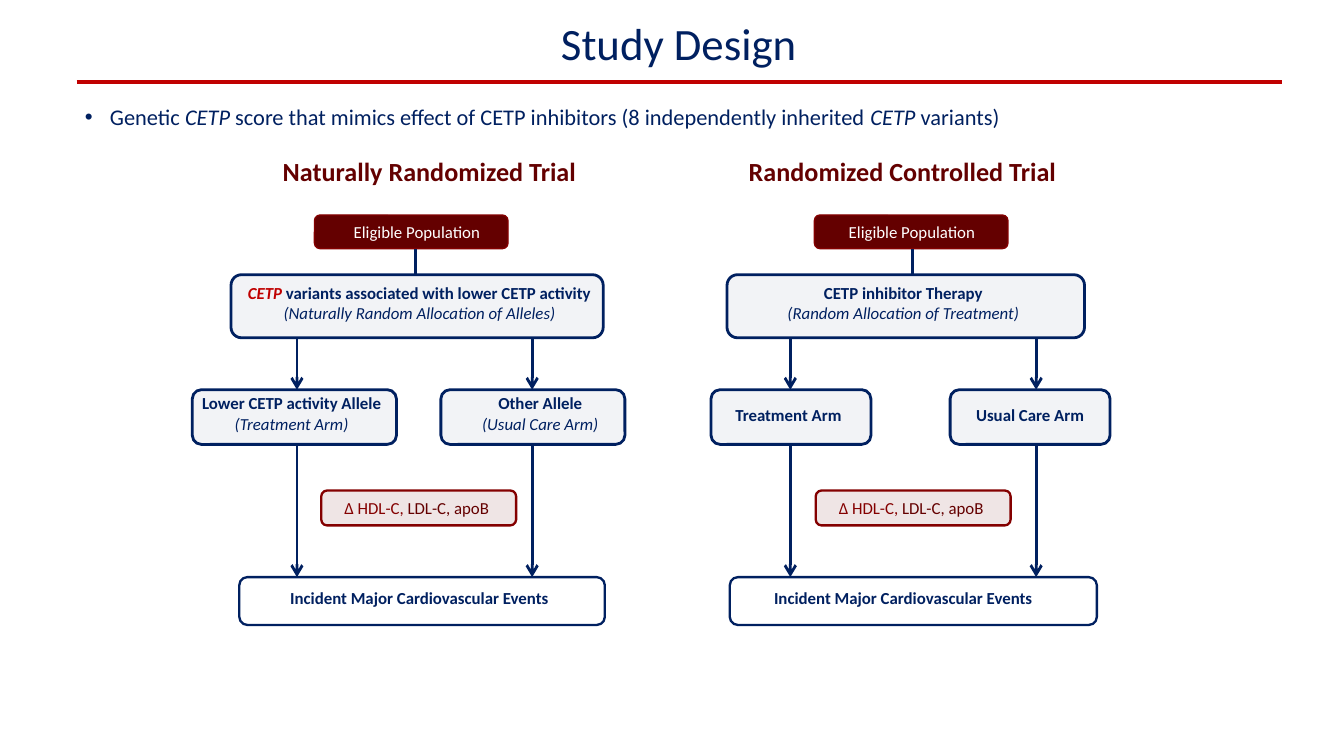
from lxml import etree
from pptx import Presentation
from pptx.dml.color import RGBColor
from pptx.enum import shapes, text
from pptx.oxml.ns import qn
from pptx.util import Pt

THEME = {
    "font": "Calibri",
    "navy": "002060", "red": "C00000", "maroon": "640000", "crimson": "840000", "white": "FFFFFF",
    "title": 24, "heading": 14, "body": 12, "label": 9,
}

# A run is (text, colour, styles), where styles may hold b for bold and i for italic.
TITLE = [("Study Design", "navy", "")]
SUMMARY = [
    ("Genetic ", "navy", ""), ("CETP", "navy", "i"),
    (" score that mimics effect of CETP inhibitors (8 independently inherited ", "navy", ""),
    ("CETP", "navy", "i"), (" variants)", "navy", ""),
]
ELIGIBLE = [[("Eligible Population", "white", "")]]
LIPIDS = [[("Δ HDL-C, ", "crimson", ""), ("LDL-C, apoB", "maroon", "")]]
EVENTS = [[("Incident Major Cardiovascular Events", "navy", "b")]]

# Each row: top, height, fill, fill opacity in percent, line colour, line width, tight line spacing
ROWS = {
    "eligible": (115.2, 18, "maroon", 100, "crimson", 0.75, False),
    "allocation": (147.2, 33.8, "navy", 5, "navy", 1.5, True),
    "arms": (208.8, 29.3, "navy", 5, "navy", 1.5, True),
    "lipids": (262.8, 18.7, "maroon", 10, "crimson", 1.25, False),
    "events": (309.2, 25.6, None, 0, "navy", 1.25, True),
}

# Each node: row, left, width, shift of the label from the box centre, paragraphs
TRIALS = [
    {
        "heading": ("Naturally Randomized Trial", 139.7, 180.7),
        "stem": 222.5, "arrows": (159.1, 285.1),
        "nodes": [
            ("eligible", 168.5, 103.7, 2.9, ELIGIBLE),
            ("allocation", 123.8, 199.4, 1.1, [
                [("CETP ", "red", "bi"), ("variants associated with lower CETP activity", "navy", "b")],
                [("(Naturally Random Allocation of Alleles)", "navy", "i")]]),
            ("arms", 103, 109.4, -1.5, [
                [("Lower CETP activity Allele", "navy", "b")], [("(Treatment Arm)", "navy", "i")]]),
            ("arms", 236.2, 98.6, 3.9, [
                [("Other Allele", "navy", "b")], [("(Usual Care Arm)", "navy", "i")]]),
            ("lipids", 172.1, 104.4, -1.1, LIPIDS),
            ("events", 128.2, 195.8, -1.5, EVENTS),
        ],
    },
    {
        "heading": ("Randomized Controlled Trial", 388.8, 189.4),
        "stem": 488.9, "arrows": (423.4, 555.1),
        "nodes": [
            ("eligible", 436.3, 103.7, 0.3, ELIGIBLE),
            ("allocation", 389.5, 191.5, -1.4, [
                [("CETP inhibitor Therapy", "navy", "b")],
                [("(Random Allocation of Treatment)", "navy", "i")]]),
            ("arms", 380.9, 85.7, -1.4, [[("Treatment Arm", "navy", "b")]]),
            ("arms", 509, 85.7, 0, [[("Usual Care Arm", "navy", "b")]]),
            ("lipids", 437, 104.4, -1.1, LIPIDS),
            ("events", 391, 196.6, -5.5, EVENTS),
        ],
    },
]


def color(name):
    return RGBColor.from_string(THEME[name])


def assign(target, values):
    for name, value in values.items():
        setattr(target, name, value)


def place(shape, left, top, width, height):
    assign(shape, {"left": Pt(left), "top": Pt(top), "width": Pt(width), "height": Pt(height)})


def add_runs(paragraph, runs, size):
    for words, tint, styles in runs:
        run = paragraph.add_run()
        run.text = words
        assign(run.font, {"name": THEME["font"], "size": Pt(THEME[size]),
                          "bold": "b" in styles, "italic": "i" in styles})
        run.font.color.rgb = color(tint)


def add_label(slide, area, paragraphs, size, tight=False):
    frame = slide.shapes.add_textbox(*map(Pt, area)).text_frame
    frame.word_wrap = True
    for index, runs in enumerate(paragraphs):
        paragraph = frame.add_paragraph() if index else frame.paragraphs[0]
        paragraph.alignment = text.PP_ALIGN.CENTER
        if tight:
            paragraph.line_spacing = 0.7
        if index:
            paragraph.space_before = Pt(3.6)
        add_runs(paragraph, runs, size)


def add_node(slide, row, left, width, shift, paragraphs):
    top, height, fill, opacity, outline, weight, tight = ROWS[row]
    box = slide.shapes.add_shape(shapes.MSO_SHAPE.FLOWCHART_ALTERNATE_PROCESS,
                                 *map(Pt, (left, top, width, height)))
    box.shadow.inherit = False
    box.line.color.rgb = color(outline)
    box.line.width = Pt(weight)
    if fill:
        box.fill.solid()
        box.fill.fore_color.rgb = color(fill)
        if opacity < 100:
            tint = box.fill._xPr.find(".//" + qn("a:srgbClr"))
            etree.SubElement(tint, qn("a:alpha"), val=str(opacity * 1000))
    else:
        box.fill.background()
    label_height = 15 + 12 * (len(paragraphs) - 1) if tight else 18
    label_top = top + (height - label_height) / 2
    add_label(slide, (left + shift - 5, label_top, width + 10, label_height),
              paragraphs, "label", tight)


def add_line(slide, start, end, tint="navy", weight=1.5, arrow=False):
    line = slide.shapes.add_connector(shapes.MSO_CONNECTOR.STRAIGHT, *map(Pt, start + end))
    line.line.color.rgb = color(tint)
    line.line.width = Pt(weight)
    if arrow:
        etree.SubElement(line.line._get_or_add_ln(), qn("a:tailEnd"), type="arrow")
    etree.SubElement(line._element.spPr, qn("a:effectLst"))


def link_rows(slide, x, upper, lower, arrow):
    bottom = ROWS[upper][0] + ROWS[upper][1]
    add_line(slide, (x, bottom), (x, ROWS[lower][0]), arrow=arrow)


def add_header(slide):
    title, summary = slide.placeholders
    place(title, 41, 7.9, 645.1, 29.5)
    place(summary, 38.2, 51.8, 656.6, 21.6)
    for holder, anchor in ((title, text.MSO_ANCHOR.MIDDLE), (summary, text.MSO_ANCHOR.TOP)):
        assign(holder.text_frame, {"word_wrap": True, "vertical_anchor": anchor,
                                   "auto_size": text.MSO_AUTO_SIZE.NONE})
    heading = title.text_frame.paragraphs[0]
    heading.alignment = text.PP_ALIGN.CENTER
    add_runs(heading, TITLE, "title")

    bullet = summary.text_frame.paragraphs[0]
    bullet.space_before = Pt(0)
    properties = bullet._p.get_or_add_pPr()
    properties.set("marL", str(Pt(13.5)))
    properties.set("indent", str(-Pt(13.5)))
    etree.SubElement(properties, qn("a:buFont"), typeface="Arial")
    etree.SubElement(properties, qn("a:buChar"), char="•")
    add_runs(bullet, SUMMARY, "body")
    add_line(slide, (41, 43.9), (686.9, 43.9), "red", 1.75)


def add_trial(slide, trial):
    name, left, width = trial["heading"]
    add_label(slide, (left, 79.9, width, 24.5), [[(name, "maroon", "b")]], "heading")
    for node in trial["nodes"]:
        add_node(slide, *node)
    link_rows(slide, trial["stem"], "eligible", "allocation", arrow=False)
    for x in trial["arrows"]:
        link_rows(slide, x, "allocation", "arms", arrow=True)
        link_rows(slide, x, "arms", "events", arrow=True)


def main():
    deck = Presentation()
    assign(deck, {"slide_width": Pt(720), "slide_height": Pt(405)})
    slide = deck.slides.add_slide(deck.slide_layouts[1])
    add_header(slide)
    for trial in TRIALS:
        add_trial(slide, trial)
    deck.save("out.pptx")


if __name__ == "__main__":
    main()
